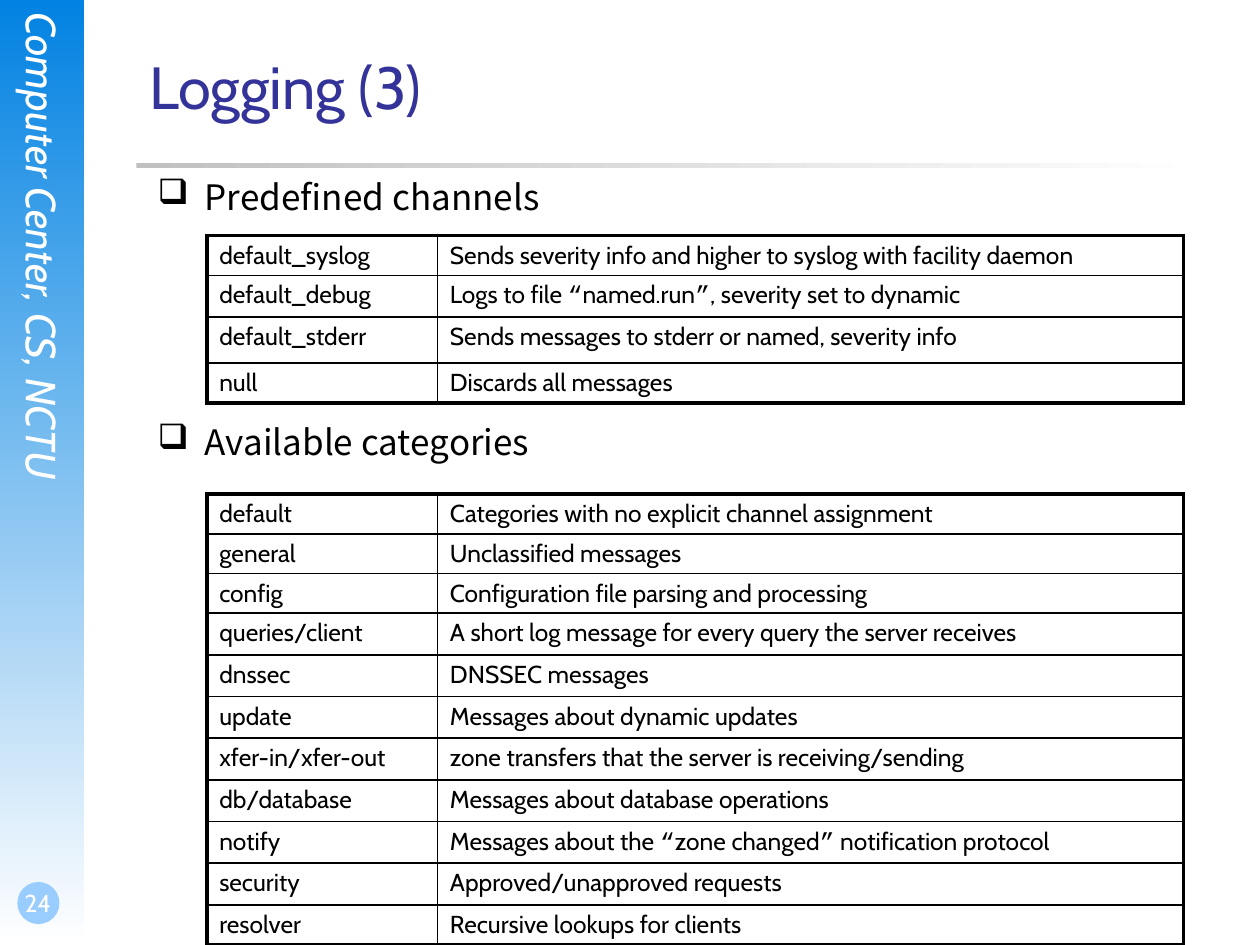
from dataclasses import dataclass
from lxml.etree import SubElement as Sub
from pptx import Presentation as Deck
from pptx.dml.color import RGBColor as Rgb
from pptx.enum.shapes import MSO_SHAPE as Kind
from pptx.enum.text import MSO_ANCHOR as Anchor, PP_ALIGN as Align
from pptx.oxml.ns import qn
from pptx.util import Cm, Pt


@dataclass
class Theme:
    white: str = "FFFFFF"
    black: str = "000000"
    blue: str = "0282E2"
    sky: str = "99CCFF"
    navy: str = "333399"
    gray: str = "C0C0C0"
    face: str = "Cabin"
    wide: str = "Noto Sans CJK SC"
    mono: str = "Courier New"
    title: int = 34
    side: int = 24
    head: int = 20
    small: int = 14
    thick: float = 2.25
    thin: float = 1


look = Theme()


def style(para, size, color, face=look.face):
    font = para.font
    font.name, font.size = face, Pt(size)
    font.color.rgb = Rgb.from_string(color)


def trim(frame, left=0, bottom=0):
    frame.word_wrap = True
    frame.margin_left, frame.margin_bottom = Cm(left), Cm(bottom)
    frame.margin_top = frame.margin_right = 0


deck = Deck()
deck.slide_width, deck.slide_height = Cm(25.4), Cm(19.05)
slide = deck.slides.add_slide(deck.slide_layouts[5])
shapes = slide.shapes

forms = [
    (Kind.RECTANGLE, 0, 0, 1.7, 19.05, look.blue, 270),
    (Kind.OVAL, 0.35, 17.78, 0.85, 0.85, look.sky, None),
    (Kind.RECTANGLE, 2.75, 3.28, 21.6, 0.1, look.gray, 0),
]
for kind, x, y, w, h, color, angle in forms:
    form = shapes.add_shape(kind, Cm(x), Cm(y), Cm(w), Cm(h))
    form.shadow.inherit = False
    form.line.fill.background()
    if angle is None:
        form.fill.solid()
        form.fill.fore_color.rgb = Rgb.from_string(color)
    else:
        form.fill.gradient()
        form.fill.gradient_angle = angle
        for stop, tone in zip(form.fill.gradient_stops, (color, look.white)):
            stop.color.rgb = Rgb.from_string(tone)

side = shapes.add_textbox(Cm(0.35), Cm(0.25), Cm(1.02), Cm(12.98)).text_frame
trim(side)
side._txBody.bodyPr.set("vert", "eaVert")
side.text = "Computer Center, CS, NCTU"
style(side.paragraphs[0], look.side, look.white)
side.paragraphs[0].font.italic = True

page = shapes.add_textbox(0, Cm(17.35), Cm(1.48), Cm(1.27)).text_frame
trim(page, 0.05, 0.13)
page.vertical_anchor = Anchor.BOTTOM
page.text = "24"
page.paragraphs[0].alignment = Align.CENTER
style(page.paragraphs[0], look.small, look.white)

title = shapes.title
title.left, title.top, title.width, title.height = Cm(2.75), Cm(0.33), Cm(21.6), Cm(2.8)
title.text = "Logging (3)"
title.text_frame.vertical_anchor = Anchor.MIDDLE
title.text_frame.paragraphs[0].alignment = Align.LEFT
style(title.text_frame.paragraphs[0], look.title, look.navy)

body = shapes.add_textbox(Cm(3.18), Cm(3.53), Cm(20.75), Cm(13.54)).text_frame
trim(body)
body.text = "Predefined channels\nAvailable categories"
for para, gap in zip(body.paragraphs, (0, 116)):
    style(para, look.head, look.black, look.wide)
    para.space_before = Pt(gap)
    props = para._p.get_or_add_pPr()
    props.set("marL", str(Cm(0.95)))
    props.set("indent", str(Cm(-0.95)))
    mark = props.makeelement(qn("a:buChar"), {"char": "❑"})
    props.insert_element_before(mark, "a:tabLst", "a:defRPr", "a:extLst")

channels = [
    ("default_syslog", "Sends severity info and higher to syslog with facility daemon"),
    ("default_debug", "Logs to file “named.run”, severity set to dynamic"),
    ("default_stderr", "Sends messages to stderr or named, severity info"),
    ("null", "Discards all messages"),
]
topics = [
    ("default", "Categories with no explicit channel assignment"),
    ("general", "Unclassified messages"),
    ("config", "Configuration file parsing and processing"),
    ("queries/client", "A short log message for every query the server receives"),
    ("dnssec", "DNSSEC messages"),
    ("update", "Messages about dynamic updates"),
    ("xfer-in/xfer-out", "zone transfers that the server is receiving/sending"),
    ("db/database", "Messages about database operations"),
    ("notify", "Messages about the “zone changed” notification protocol"),
    ("security", "Approved/unapproved requests"),
    ("resolver", "Recursive lookups for clients"),
]
grids = [
    (4.75, channels, [0.8, 0.84, 0.93, 0.8]),
    (9.96, topics, [0.8] * 3 + [0.84] * 7 + [0.8]),
]
for top, rows, highs in grids:
    frame = shapes.add_table(len(rows), 2, Cm(4.17), Cm(top), Cm(19.69), Cm(sum(highs)))
    table = frame.table
    table.first_row = table.horz_banding = False
    table.columns[0].width, table.columns[1].width = Cm(4.65), Cm(15.04)
    last = len(rows) - 1
    for r, (row, high) in enumerate(zip(rows, highs)):
        table.rows[r].height = Cm(high)
        for c, text in enumerate(row):
            cell = table.cell(r, c)
            cell.margin_left = cell.margin_right = Cm(0.25)
            cell.margin_top = cell.margin_bottom = Cm(0.1)
            para = cell.text_frame.paragraphs[0]
            style(para, look.small, look.black)
            for part in text.replace("“", "|“|").replace("”", "|”|").split("|"):
                run = para.add_run()
                run.text = part
                if part in ("“", "”"):
                    run.font.name = look.mono
            props = cell._tc.get_or_add_tcPr()
            edges = {"lnL": c == 0, "lnR": c == 1, "lnT": r == 0, "lnB": r == last}
            for edge, outer in edges.items():
                width = Pt(look.thick if outer else look.thin)
                line = Sub(props, qn(f"a:{edge}"), w=str(width))
                Sub(Sub(line, qn("a:solidFill")), qn("a:srgbClr"), val=look.black)
            cell.fill.background()

deck.save("out.pptx")
